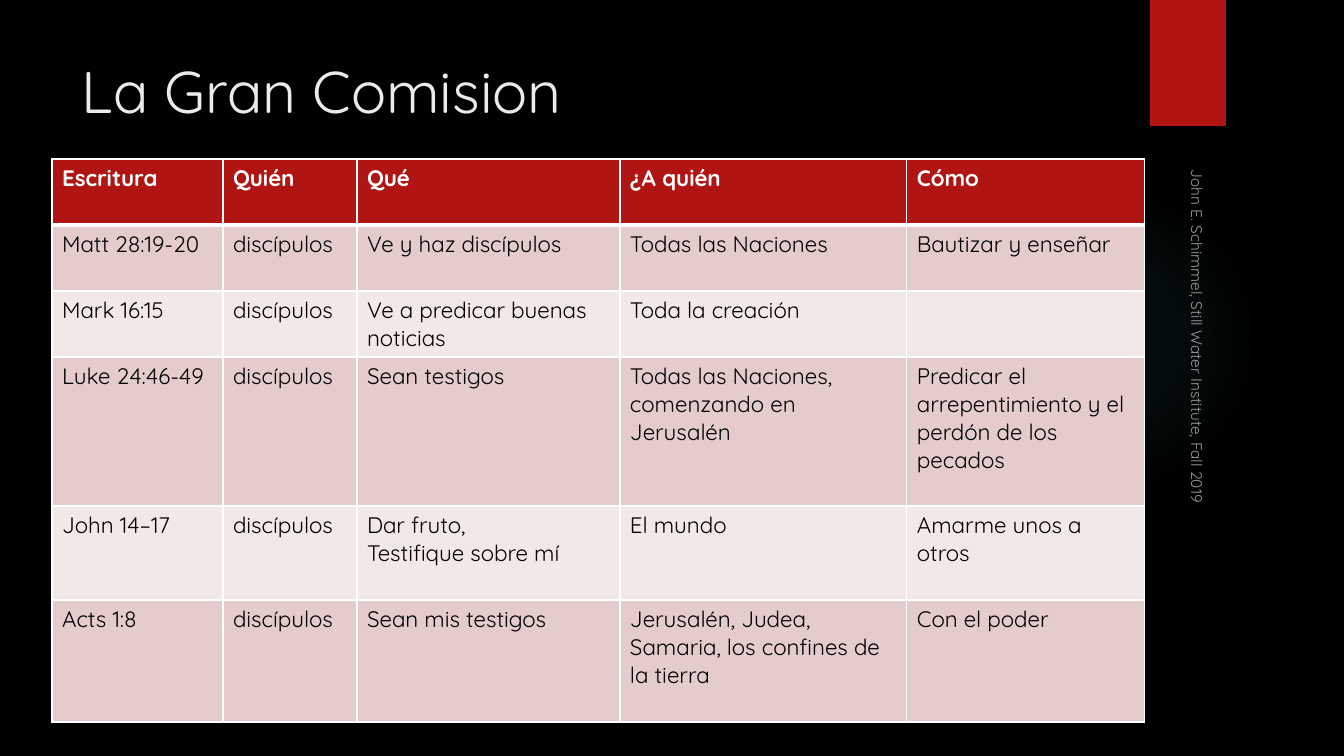
import pptx
import pptx.util
import pptx.dml.color
import pptx.enum.shapes
import pptx.enum.text
import pptx.oxml
import pptx.oxml.ns

SCALE = 914400 / 100.8
FONT = "Quicksand"
COLORS = {
    "black": "000000",
    "red": "B01513",
    "title": "EBEBEB",
    "white": "FFFFFF",
    "band_dark": "E4CCCC",
    "band_light": "F2E8E7",
    "glow": "50B9C1",
}
COLUMN_WIDTHS = [171, 134, 263, 287, 238]
ROW_HEIGHTS = [66, 66, 66, 149, 94, 122]
ROWS = [
    ["Escritura", "Quién", "Qué", "¿A quién", "Cómo"],
    ["Matt 28:19-20", "discípulos", "Ve y haz discípulos",
     "Todas las Naciones", "Bautizar y enseñar"],
    ["Mark 16:15", "discípulos", "Ve a predicar buenas noticias",
     "Toda la creación", ""],
    ["Luke 24:46-49", "discípulos", "Sean testigos",
     "Todas las Naciones, comenzando en Jerusalén",
     "Predicar el arrepentimiento y el perdón de los pecados"],
    ["John 14–17", "discípulos", "Dar fruto,\nTestifique sobre mí",
     "El mundo", "Amarme unos a otros"],
    ["Acts 1:8", "discípulos", "Sean mis testigos",
     "Jerusalén, Judea, Samaria, los confines de la tierra",
     "Con el poder"],
]


def px(n):
    return pptx.util.Emu(round(n * SCALE))


def rgb(name):
    return pptx.dml.color.RGBColor.from_string(COLORS[name])


def xml(tag, body):
    return pptx.oxml.parse_xml(
        f'<a:{tag} {pptx.oxml.ns.nsdecls("a")}{body}</a:{tag.split()[0]}>')


def write(tf, text, size, color, bold=False):
    tf.word_wrap = True
    p = tf.paragraphs[0]
    for i, line in enumerate(text.split("\n")):
        if i:
            p.add_line_break()
        r = p.add_run()
        r.text = line
        r.font.name = FONT
        r.font.size = pptx.util.Pt(size)
        r.font.bold = bold
        r.font.color.rgb = rgb(color)
    return p


def add_shape(s, kind, box, color):
    sp = s.shapes.add_shape(kind, *map(px, box))
    sp.shadow.inherit = False
    sp.line.fill.background()
    sp.fill.solid()
    sp.fill.fore_color.rgb = rgb(color)
    return sp


def add_glow(s, box):
    sp = add_shape(s, pptx.enum.shapes.MSO_SHAPE.OVAL, box, "glow")
    stops = "".join(
        f'<a:gs pos="{pos}000"><a:srgbClr val="{COLORS["glow"]}">'
        f'<a:alpha val="{alpha}000"/></a:srgbClr></a:gs>'
        for pos, alpha in [(0, 7), (36, 6), (69, 0)])
    gradient = xml("gradFill", (
        f'><a:gsLst>{stops}</a:gsLst><a:path path="circle">'
        '<a:fillToRect l="50000" t="50000" r="50000" b="50000"/></a:path>'))
    solid = sp._element.spPr.find(pptx.oxml.ns.qn("a:solidFill"))
    solid.getparent().replace(solid, gradient)


def add_text(s, box, text, size, color):
    sp = s.shapes.add_textbox(*map(px, box))
    write(sp.text_frame, text, size, color)
    return sp


def add_credit(s, box, text):
    sp = add_text(s, box, text, 11, "white")
    sp.rotation = 90
    sp.text_frame.vertical_anchor = pptx.enum.text.MSO_ANCHOR.BOTTOM
    color = next(sp._element.iter(pptx.oxml.ns.qn("a:srgbClr")))
    color.append(xml("alpha", ' val="60000">'))


def add_borders(cell, top, bottom):
    tcPr = cell._tc.get_or_add_tcPr()
    for side, points in [("L", 1), ("R", 1), ("T", top), ("B", bottom)]:
        width = pptx.util.Pt(points)
        tcPr.append(xml(f"ln{side}", (
            f' w="{width}"><a:solidFill><a:srgbClr val="{COLORS["white"]}"/>'
            '</a:solidFill>')))


def add_scripture_table(s, left, top):
    box = left, top, sum(COLUMN_WIDTHS), sum(ROW_HEIGHTS)
    table = s.shapes.add_table(
        len(ROWS), len(COLUMN_WIDTHS), *map(px, box)).table
    for column, width in zip(table.columns, COLUMN_WIDTHS):
        column.width = px(width)
    for i, (row, height) in enumerate(zip(table.rows, ROW_HEIGHTS)):
        row.height = px(height)
        header = i == 0
        band = "red" if header else "band_dark" if i % 2 else "band_light"
        for cell, text in zip(row.cells, ROWS[i]):
            add_borders(cell, 3 if i == 1 else 1, 3 if header else 1)
            cell.fill.solid()
            cell.fill.fore_color.rgb = rgb(band)
            if text:
                write(cell.text_frame, text, 16,
                      "white" if header else "black", header)


def main():
    prs = pptx.Presentation()
    prs.slide_width, prs.slide_height = px(1344), px(756)
    s = prs.slides.add_slide(prs.slide_layouts[6])
    s.background.fill.solid()
    s.background.fill.fore_color.rgb = rgb("black")
    add_glow(s, (948, 184, 310, 310))
    add_shape(s, pptx.enum.shapes.MSO_SHAPE.RECTANGLE,
              (1150, 0, 76, 126), "red")
    add_text(s, (72, 50, 1037, 154), "La Gran Comision", 42, "title")
    add_scripture_table(s, 52, 159)
    add_credit(s, (987, 356, 425, 33),
               "John E. Schimmel, Still Water Institute, Fall 2019")
    prs.save("out.pptx")


if __name__ == "__main__":
    main()
